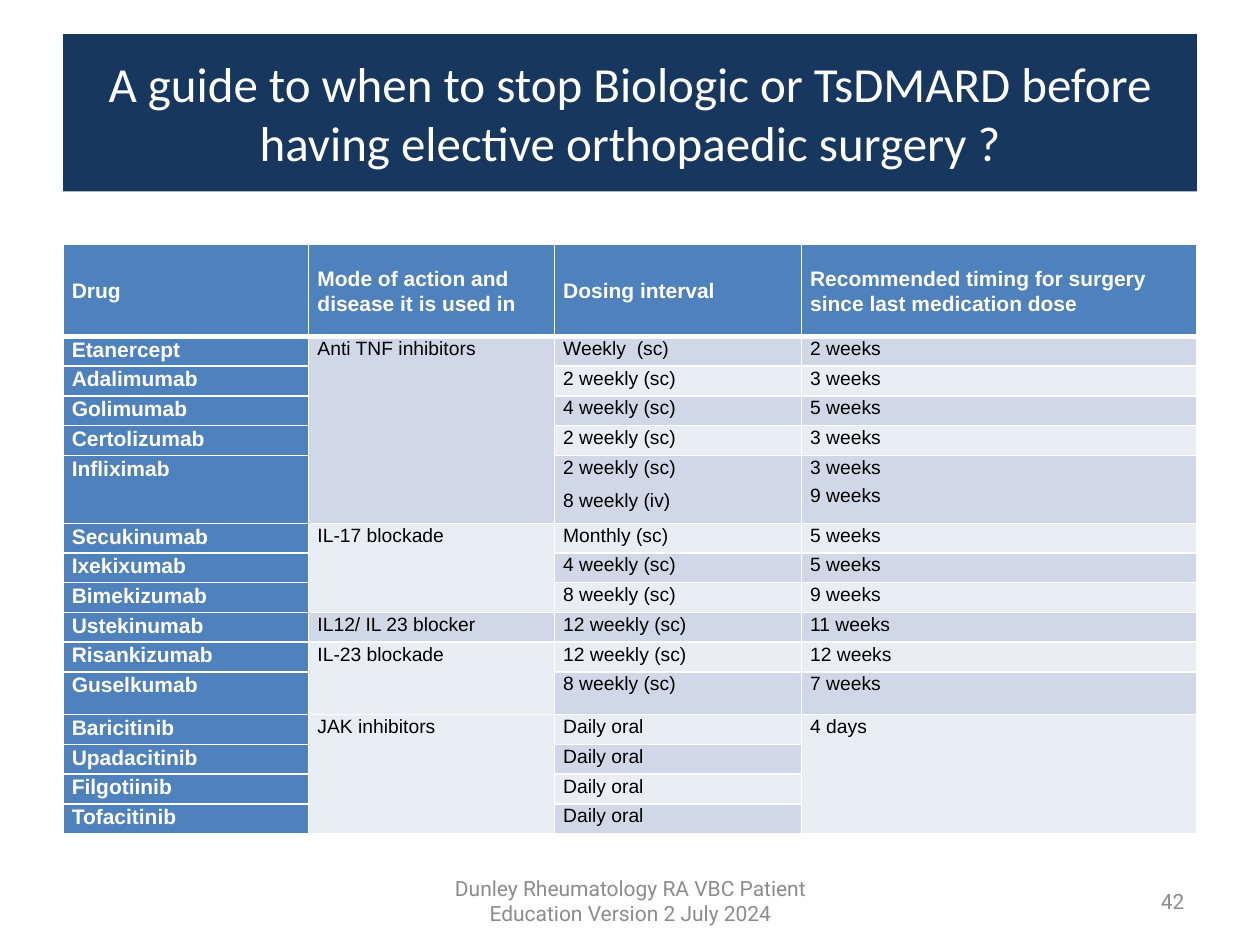
from lxml.etree import SubElement
from pptx import Presentation
from pptx.dml.color import RGBColor
from pptx.enum.text import MSO_ANCHOR, MSO_AUTO_SIZE, PP_ALIGN
from pptx.oxml.ns import qn
from pptx.util import Inches, Pt

WIDTH, HEIGHT, MARGIN = 10, 7.5, 0.5
NAVY, BLUE, BANDS = "17375E", "4F81BD", ("E9EDF4", "D0D8E8")
WHITE, BLACK, GREY = "FFFFFF", "000000", "8C8C8C"

COLUMN_WIDTHS = (1.95, 1.95, 1.96, 3.14)
TABLE_TOP, TABLE_HEIGHT = 1.94, 4.68
SPECIAL_ROWS = {0: 0.73, 5: 0.54, 11: 0.34}
HEADINGS = (
    "Drug",
    "Mode of action and disease it is used in",
    "Dosing interval",
    "Recommended timing for surgery since last medication dose",
)
# Each mode of action spans its drugs: name, dosing interval, timing.
# A timing of None continues the cell above.
GROUPS = (
    ("Anti TNF inhibitors", (
        ("Etanercept", "Weekly  (sc)", "2 weeks"),
        ("Adalimumab", "2 weekly (sc)", "3 weeks"),
        ("Golimumab", "4 weekly (sc)", "5 weeks"),
        ("Certolizumab", "2 weekly (sc)", "3 weeks"),
        ("Infliximab", "2 weekly (sc)\n8 weekly (iv)", "3 weeks\n9 weeks"),
    )),
    ("IL-17 blockade", (
        ("Secukinumab", "Monthly (sc)", "5 weeks"),
        ("Ixekixumab", "4 weekly (sc)", "5 weeks"),
        ("Bimekizumab", "8 weekly (sc)", "9 weeks"),
    )),
    ("IL12/ IL 23 blocker", (
        ("Ustekinumab", "12 weekly (sc)", "11 weeks"),
    )),
    ("IL-23 blockade", (
        ("Risankizumab", "12 weekly (sc)", "12 weeks"),
        ("Guselkumab", "8 weekly (sc)", "7 weeks"),
    )),
    ("JAK inhibitors", (
        ("Baricitinib", "Daily oral", "4 days"),
        ("Upadacitinib", "Daily oral", None),
        ("Filgotiinib", "Daily oral", None),
        ("Tofacitinib", "Daily oral", None),
    )),
)


def color(value):
    return RGBColor.from_string(value)


def set_fill(target, value):
    target.fill.solid()
    target.fill.fore_color.rgb = color(value)


def write_text(frame, text, *, size, font, ink, bold=False, align=PP_ALIGN.LEFT,
               line_spacing=None, before=0, after=0):
    """Write one paragraph for each line of text."""
    frame.word_wrap = True
    for index, line in enumerate(text.split("\n")):
        paragraph = frame.add_paragraph() if index else frame.paragraphs[0]
        paragraph.alignment = align
        paragraph.space_before, paragraph.space_after = Pt(before), Pt(after)
        if line_spacing:
            paragraph.line_spacing = line_spacing
        run = paragraph.add_run()
        run.text = line
        run.font.name, run.font.size, run.font.bold = font, Pt(size), bold
        run.font.color.rgb = color(ink)


def set_borders(cell, row):
    """Draw white borders, with a thick rule under the header row."""
    properties = cell._tc.get_or_add_tcPr()
    widths = {"lnL": 1, "lnR": 1, "lnT": 3 if row == 1 else 1, "lnB": 1 if row else 3}
    for position, (side, width) in enumerate(widths.items()):
        line = SubElement(properties, qn(f"a:{side}"), w=str(Pt(width)))
        fill = SubElement(line, qn("a:solidFill"))
        SubElement(fill, qn("a:srgbClr"), val=WHITE)
        properties.insert(position, line)


def write_cell(cell, text, *, heading=False, **layout):
    layout = {"line_spacing": 1.07, "after": 8, **layout}
    write_text(cell.text_frame, text, font="Arial", size=12 if heading else 11,
               ink=WHITE if heading else BLACK, bold=heading, **layout)


def format_cells(table):
    for row_index, row in enumerate(table.rows):
        for column_index, cell in enumerate(row.cells):
            is_heading = row_index == 0 or column_index == 0
            set_fill(cell, BLUE if is_heading else BANDS[row_index % 2])
            cell.margin_left = cell.margin_right = Inches(0.07)
            cell.margin_top = cell.margin_bottom = 0
            cell.vertical_anchor = MSO_ANCHOR.TOP if row_index else MSO_ANCHOR.MIDDLE
            set_borders(cell, row_index)


def fill_table(table):
    for column, heading in enumerate(HEADINGS):
        write_cell(table.cell(0, column), heading, heading=True)
    row = 1
    for mode, drugs in GROUPS:
        last_row = row + len(drugs) - 1
        if last_row > row:
            table.cell(row, 1).merge(table.cell(last_row, 1))
            if drugs[-1][2] is None:
                table.cell(row, 3).merge(table.cell(last_row, 3))
        write_cell(table.cell(row, 1), mode)
        for drug, interval, timing in drugs:
            write_cell(table.cell(row, 0), drug, heading=True)
            pair = "\n" in interval
            layout = dict(align=PP_ALIGN.JUSTIFY, before=3, after=3) if pair else {}
            write_cell(table.cell(row, 2), interval, **layout)
            if timing:
                write_cell(table.cell(row, 3), timing, **layout)
            if pair:
                last_timing = table.cell(row, 3).text_frame.paragraphs[-1]
                last_timing.alignment = PP_ALIGN.LEFT
                last_timing.space_before, last_timing.space_after = Pt(0), Pt(8)
            row += 1


def add_drug_table(slide):
    row_count = 1 + sum(len(drugs) for _, drugs in GROUPS)
    table = slide.shapes.add_table(
        row_count, len(HEADINGS), Inches(MARGIN), Inches(TABLE_TOP),
        Inches(WIDTH - 2 * MARGIN), Inches(TABLE_HEIGHT)).table
    for column, width in zip(table.columns, COLUMN_WIDTHS):
        column.width = Inches(width)
    plain_height = ((TABLE_HEIGHT - sum(SPECIAL_ROWS.values()))
                    / (row_count - len(SPECIAL_ROWS)))
    for index, row in enumerate(table.rows):
        row.height = Inches(SPECIAL_ROWS.get(index, plain_height))
    format_cells(table)
    fill_table(table)


def add_title(slide, text):
    title = slide.shapes.title
    title.left, title.top = Inches(MARGIN), Inches(0.27)
    title.width, title.height = Inches(WIDTH - 2 * MARGIN), Inches(1.25)
    set_fill(title, NAVY)
    title.text_frame.auto_size = MSO_AUTO_SIZE.NONE
    title.text_frame.vertical_anchor = MSO_ANCHOR.MIDDLE
    write_text(title.text_frame, text, size=28, font="Calibri", ink=WHITE,
               align=PP_ALIGN.CENTER)


def add_footer(slide, text, left, width, align):
    box = slide.shapes.add_textbox(Inches(left), Inches(6.95), Inches(width), Inches(0.4))
    box.text_frame.vertical_anchor = MSO_ANCHOR.MIDDLE
    write_text(box.text_frame, text, size=12, font="Roboto", ink=GREY, align=align)


def main():
    presentation = Presentation()
    presentation.slide_width, presentation.slide_height = Inches(WIDTH), Inches(HEIGHT)
    slide = presentation.slides.add_slide(presentation.slide_layouts[5])
    add_title(slide, "A guide to when to stop Biologic or TsDMARD before "
                     "having elective orthopaedic surgery ?")
    add_drug_table(slide)
    add_footer(slide, "Dunley Rheumatology RA VBC Patient Education Version 2 July 2024",
               3.42, 3.17, PP_ALIGN.CENTER)
    add_footer(slide, "42", 7.17, 2.33, PP_ALIGN.RIGHT)
    presentation.save("out.pptx")


if __name__ == "__main__":
    main()
